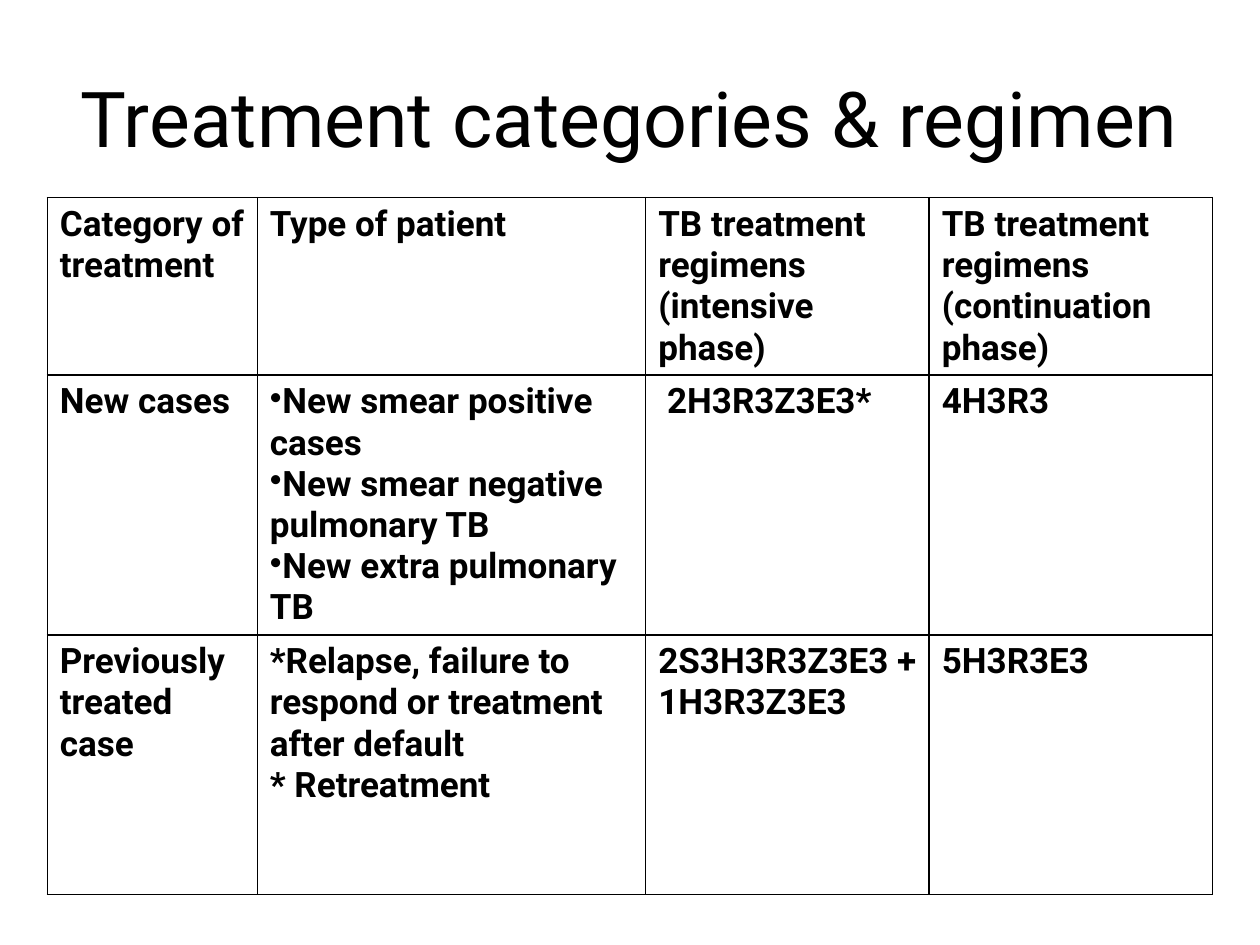
from dataclasses import dataclass

from lxml import etree
from pptx import Presentation
from pptx.dml.color import RGBColor
from pptx.enum.text import MSO_ANCHOR, PP_ALIGN
from pptx.oxml.ns import qn
from pptx.util import Pt

MIDDLE = MSO_ANCHOR.MIDDLE
CENTER = PP_ALIGN.CENTER

TITLE = "Treatment categories & regimen"
DOT = "•"
ROWS = [
    [
        ["Category of treatment"],
        ["Type of patient"],
        ["TB treatment regimens (intensive phase)"],
        ["TB treatment regimens (continuation phase)"],
    ],
    [
        ["New cases"],
        [
            DOT + "New smear positive cases",
            DOT + "New smear negative pulmonary TB",
            DOT + "New extra pulmonary TB",
        ],
        [" 2H3R3Z3E3*"],
        ["4H3R3"],
    ],
    [
        ["Previously treated case"],
        [
            "*Relapse, failure to respond or treatment after default",
            "* Retreatment",
        ],
        ["2S3H3R3Z3E3 +", "1H3R3Z3E3"],
        ["5H3R3E3"],
    ],
]
WIDTHS = [120, 222, 162, 162]
HEIGHTS = [101, 148.5, 148.5]
LEFT, TOP = 27, 113


@dataclass(frozen=True)
class Theme:
    face: str = "Roboto"
    ink: str = "000000"
    paper: str = "FFFFFF"
    head: int = 44
    body: int = 20
    rule: int = 1


THEME = Theme()


def style(para, size, bold):
    font = para.font
    font.name = THEME.face
    font.size = Pt(size)
    font.bold = bold
    font.color.rgb = RGBColor.from_string(THEME.ink)


def border(cell):
    props = cell._tc.get_or_add_tcPr()
    for side in ("lnL", "lnR", "lnT", "lnB"):
        line = etree.SubElement(props, qn("a:" + side), w=str(Pt(THEME.rule)))
        fill = etree.SubElement(line, qn("a:solidFill"))
        etree.SubElement(fill, qn("a:srgbClr"), val=THEME.ink)


def write(cell, lines):
    frame = cell.text_frame
    for i, text in enumerate(lines):
        para = frame.paragraphs[0] if i == 0 else frame.add_paragraph()
        para.text = text.removeprefix(DOT)
        if text.startswith(DOT):
            props = para._p.get_or_add_pPr()
            etree.SubElement(props, qn("a:buChar"), char=DOT)
        style(para, THEME.body, True)


def add_title(slide):
    title = slide.shapes.title
    title.left, title.top, title.width, title.height = map(Pt, (36, 21.6, 648, 90))
    frame = title.text_frame
    frame.text = TITLE
    frame.vertical_anchor = MIDDLE
    para = frame.paragraphs[0]
    para.alignment = CENTER
    style(para, THEME.head, False)


def add_grid(slide):
    box = map(Pt, (LEFT, TOP, sum(WIDTHS), sum(HEIGHTS)))
    table = slide.shapes.add_table(len(ROWS), len(WIDTHS), *box).table
    for col, width in zip(table.columns, WIDTHS):
        col.width = Pt(width)
    for row, height, data in zip(table.rows, HEIGHTS, ROWS):
        row.height = Pt(height)
        for cell, lines in zip(row.cells, data):
            border(cell)
            cell.fill.solid()
            cell.fill.fore_color.rgb = RGBColor.from_string(THEME.paper)
            write(cell, lines)


def main():
    deck = Presentation()
    deck.slide_width, deck.slide_height = Pt(720), Pt(540)
    slide = deck.slides.add_slide(deck.slide_layouts[5])
    add_title(slide)
    add_grid(slide)
    deck.save("out.pptx")


if __name__ == "__main__":
    main()
